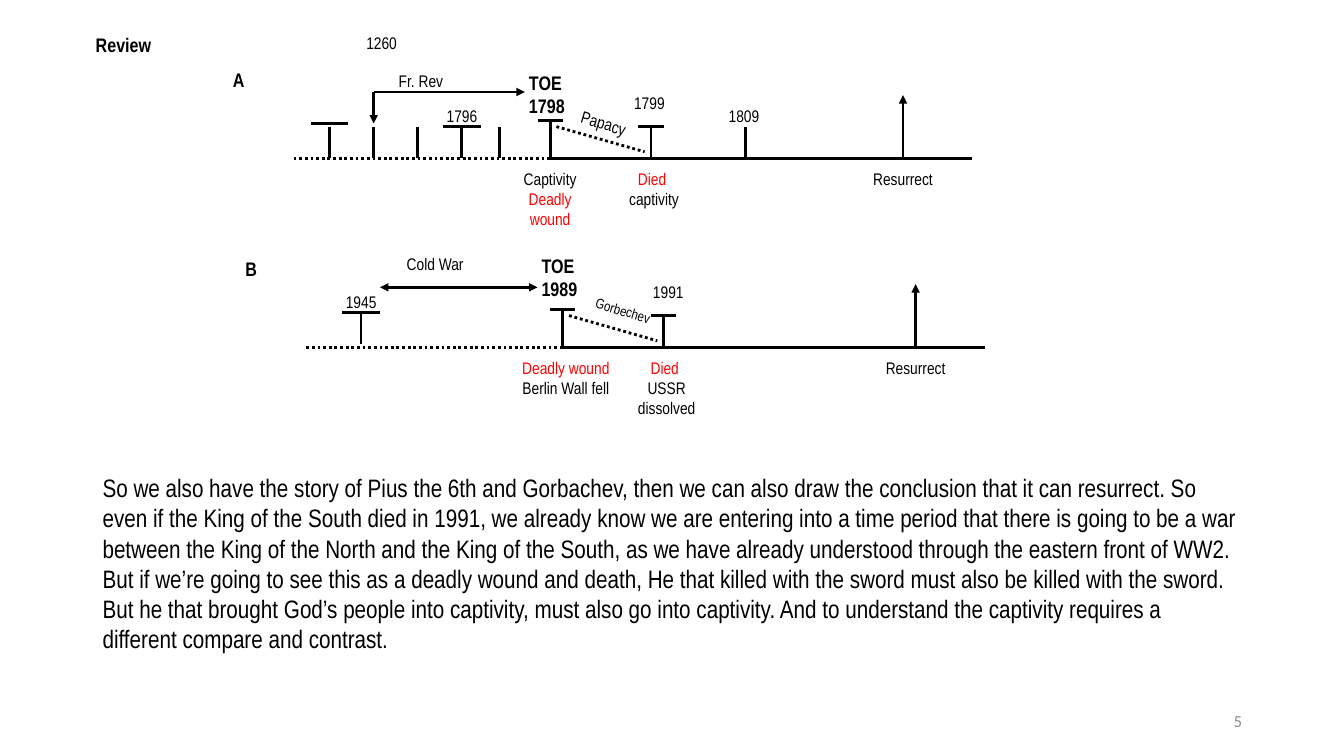
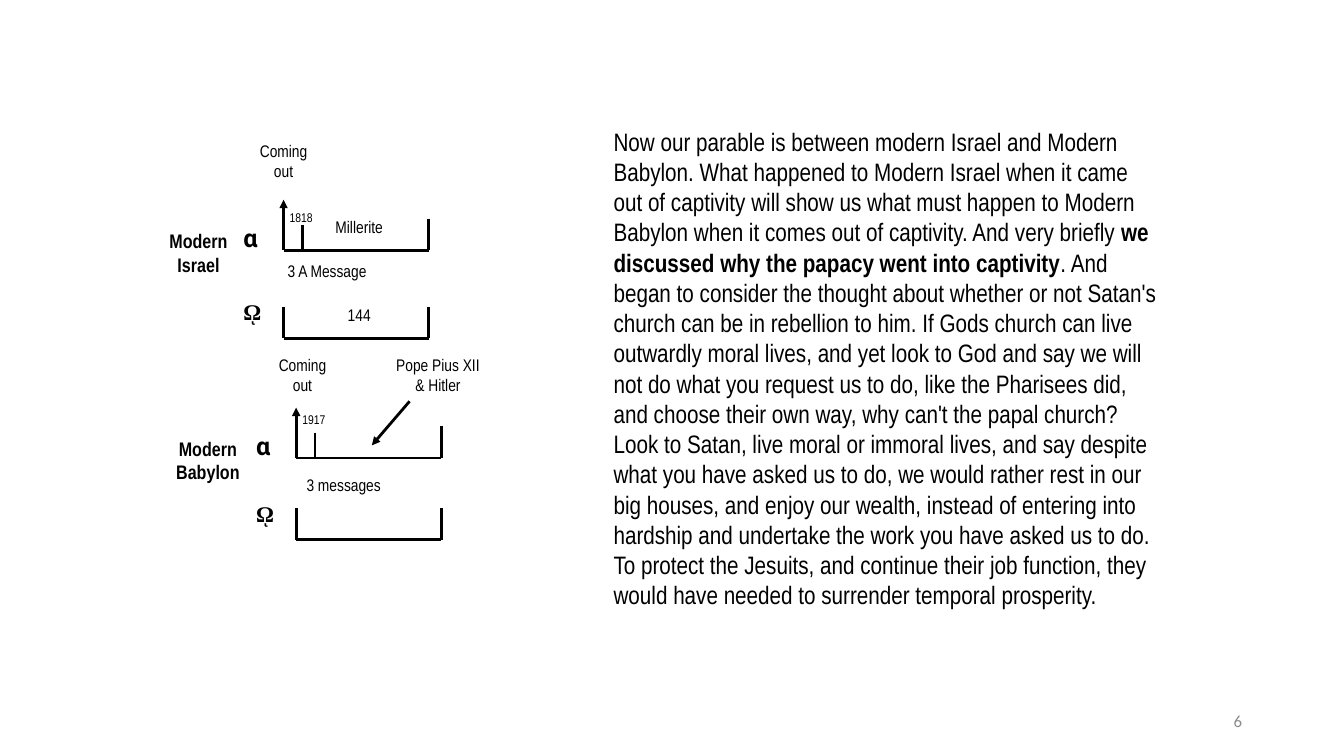
from lxml.etree import SubElement
from pptx import Presentation
from pptx.dml.color import RGBColor
from pptx.enum.dml import MSO_LINE
from pptx.enum.shapes import MSO_CONNECTOR
from pptx.enum.text import MSO_ANCHOR, MSO_AUTO_SIZE, PP_ALIGN
from pptx.oxml.ns import qn
from pptx.util import Inches, Pt

BLACK = RGBColor(0, 0, 0)
RED = RGBColor(0xFF, 0, 0)
GREY = RGBColor(0x8C, 0x8C, 0x8C)
FONT = "Arial Narrow"
LEFT, CENTER, RIGHT = PP_ALIGN.LEFT, PP_ALIGN.CENTER, PP_ALIGN.RIGHT

deck = Presentation()
deck.slide_width, deck.slide_height = Inches(13.33), Inches(7.5)
GRID = deck.slide_height // 120  # one row or column of the slide's grid
TITLE_ONLY, BLANK = deck.slide_layouts[5], deck.slide_layouts[6]


def write(shape, x, y, w, h, *lines, size=12, bold=False, align=CENTER,
          font=FONT, color=BLACK, inset=(0.04, 0.04), anchor=MSO_ANCHOR.TOP):
    """Place a text shape on the grid; a line is a string or (text, bold, color) runs."""
    shape.left, shape.top, shape.width, shape.height = (
        round(n * GRID) for n in (x, y, w, h))
    frame = shape.text_frame
    frame.word_wrap, frame.auto_size = True, MSO_AUTO_SIZE.NONE
    frame.vertical_anchor = anchor
    frame.margin_left = frame.margin_right = Inches(inset[0])
    frame.margin_top = frame.margin_bottom = Inches(inset[1])
    for i, line in enumerate(lines):
        paragraph = frame.add_paragraph() if i else frame.paragraphs[0]
        paragraph.alignment = align
        for text, strong, tint in [(line, bold, color)] if isinstance(line, str) else line:
            run = paragraph.add_run()
            run.text = text
            run.font.name, run.font.size = font, Pt(size)
            run.font.bold, run.font.color.rgb = strong, tint
    return shape


def draw(slide, x1, y1, x2, y2, dotted=False, head=False, tail=False):
    """Draw a line between two grid points, with optional arrowheads."""
    line = slide.shapes.add_connector(
        MSO_CONNECTOR.STRAIGHT, *(round(n * GRID) for n in (x1, y1, x2, y2)))
    line.line.color.rgb, line.line.width = BLACK, Pt(2)
    if dotted:
        line.line.dash_style = MSO_LINE.ROUND_DOT
    properties = line._element.spPr
    for end, wanted in (("a:headEnd", head), ("a:tailEnd", tail)):
        if wanted:
            SubElement(properties.find(qn("a:ln")), qn(end), type="triangle")
    SubElement(properties, qn("a:effectLst"))


# Slide 1: two timelines, placed from the time of the end (TOE)
review = deck.slides.add_slide(TITLE_ONLY)
write(review.shapes.title, 9.3, 4.6, 20.6, 7, "Review", size=14, bold=True)

DIED = [("Died ", False, RED)]
timelines = [
    # letter, origin, TOE row, year, wound column and width, lines, death year and column, lines
    ("A", 87.3, 25.1, -14.5, "1798", (-7, 14),
     ["Captivity", [("Deadly wound", False, RED)]], "1799", 12, [DIED, "captivity"]),
    ("B", 89.3, 55.1, -15.5, "1989", (-8, 17),
     [[("Deadly wound", False, RED)], "Berlin Wall fell"], "1991", 13,
     [DIED, "USSR", "dissolved"]),
]
for (letter, toe, base, toe_row, toe_year, (wound, wound_width), wound_lines,
     death_year, death_col, death_lines) in timelines:
    # Axis, TOE mark, decline, death mark, resurrection arrow
    for x1, y1, x2, y2, dotted, tail in [
        (0, 0, 67, 0, False, False), (0, 0, -41, 0, True, False),
        (0, -6, 0, 0, False, False), (-2, -6, 2, -6, False, False),
        (1, -5, 15, -1, True, False),
        (16, -5, 16, 0, False, False), (14, -5, 18, -5, False, False),
        (56, 0, 56, -10, False, True),
    ]:
        draw(review, toe + x1, base + y1, toe + x2, base + y2, dotted, tail=tail)
    for x, y, w, h, lines, style in [
        (-51, -15, 4, 5, [letter], {"size": 14, "bold": True, "align": LEFT}),
        (-4, toe_row, 8, 8.5, ["TOE", toe_year], {"size": 14, "bold": True, "align": LEFT}),
        (wound, 1, wound_width, 11, wound_lines, {}),
        (death_col, -11, 7.5, 4.5, [death_year], {}),
        (11, 1, 11, 11, death_lines, {}),
        (50, 1, 12, 5, ["Resurrect"], {}),
    ]:
        write(review.shapes.add_textbox(0, 0, 0, 0), toe + x, base + y, w, h, *lines, **style)

(_, toe_a, base_a, *_), (_, toe_b, base_b, *_) = timelines

# Dates and spans that belong to one timeline only
for toe, base, x, y, w, h, text in [
    (toe_a, base_a, -34.5, -20.5, 15.5, 4, "1260"),
    (toe_a, base_a, -27, -14.5, 13, 3.5, "Fr. Rev"),
    (toe_a, base_a, -17.5, -9, 7, 4, "1796"),
    (toe_a, base_a, 27, -9, 7.5, 4.5, "1809"),
    (toe_b, base_b, -28, -15.5, 15.5, 4, "Cold War"),
    (toe_b, base_b, -35.5, -9.5, 7, 4, "1945"),
]:
    write(review.shapes.add_textbox(0, 0, 0, 0), toe + x, base + y, w, h, text)

for x in (-35, -28, -21, -14, -8, 31):
    draw(review, toe_a + x, base_a - 5, toe_a + x, base_a)
draw(review, toe_a - 17, base_a - 5, toe_a - 11, base_a - 5)
draw(review, toe_a - 38, base_a - 5.5, toe_a - 32, base_a - 5.5)
draw(review, toe_a - 28, base_a - 10.5, toe_a - 28, base_a - 5.5, tail=True)
draw(review, toe_a - 28, base_a - 10.5, toe_a - 4, base_a - 10.5, tail=True)
draw(review, toe_b - 32, base_b - 5.5, toe_b - 32, base_b - 0.5)
draw(review, toe_b - 35, base_b - 5.5, toe_b - 29, base_b - 5.5)
draw(review, toe_b - 29, base_b - 9.5, toe_b - 4, base_b - 9.5, head=True, tail=True)

# Names along the declines
for toe, base, width, name, size in [
    (toe_a, base_a, 9, "Papacy", 12), (toe_b, base_b, 11, "Gorbechev", 10),
]:
    decline = write(review.shapes.add_textbox(0, 0, 0, 0),
                    toe + 4, base - 7.8, width, 4.5, name, size=size)
    decline.rotation = 16.6

write(review.shapes.add_textbox(0, 0, 0, 0), 14.7, 74.2, 184, 35.5,
      "So we also have the story of Pius the 6th and Gorbachev, then we can also draw the "
      "conclusion that it can resurrect. So even if the King of the South died in 1991, we "
      "already know we are entering into a time period that there is going to be a war "
      "between the King of the North and the King of the South, as we have already "
      "understood through the eastern front of WW2. But if we’re going to see this as a "
      "deadly wound and death, He that killed with the sword must also be killed with the "
      "sword. But he that brought God’s people into captivity, must also go into captivity. "
      "And to understand the captivity requires a different compare and contrast.",
      size=18, align=LEFT, inset=(0.1, 0.05))

# Slide 2: alpha and omega brackets for each people
parable = deck.slides.add_slide(BLANK)
peoples = [
    # name, name column and width, left, alpha base, omega base, coming out, year, message
    ("Israel", -19, 11, 45, 39.7, 53.7, (-6, -18), "1818", -7, "3 A Message", (0, 1)),
    ("Babylon", -20, 12, 47, 72.7, 85.7, (-5, -17), "1917", -8, "3 messages", (1, 2)),
]
for (people, name_col, name_width, left, alpha, omega, (out_col, out_row),
     year, year_row, message, (message_col, message_row)) in peoples:
    for base in (alpha, omega):
        draw(parable, left, base, left + 23, base)
        for side in (left, left + 23):
            draw(parable, side, base - 5, side, base)
    draw(parable, left, alpha - 3, left, alpha - 8, tail=True)
    draw(parable, left + 3, alpha - 4, left + 3, alpha)
    for x, y, w, h, lines, style in [
        (name_col, alpha - 4, name_width, 11, ["Modern", people], {"size": 14, "bold": True}),
        (-7, alpha - 5, 5, 5, ["α"],
         {"size": 18, "bold": True, "align": LEFT, "font": "Roboto"}),
        (-7, omega - 7, 5, 9, ["ῼ"],
         {"size": 16, "bold": True, "align": LEFT, "font": "Times New Roman"}),
        (out_col, alpha + out_row, 12, 9, ["Coming out"], {}),
        (0, alpha + year_row, 5.6, 3.8, [year], {"size": 9}),
        (message_col, alpha + message_row, 22, 5, [message], {"align": LEFT}),
    ]:
        write(parable.shapes.add_textbox(0, 0, 0, 0), left + x, y, w, h, *lines, **style)

# What stands inside the brackets
for x, y, w, h, lines in [
    (51, 33.7, 12, 5, ["Millerite"]),
    (51, 47.7, 12, 5, ["144"]),
    (62, 55.7, 15, 8, ["Pope Pius XII", "& Hitler"]),
]:
    write(parable.shapes.add_textbox(0, 0, 0, 0), x, y, w, h, *lines)
draw(parable, 65, 63.7, 59, 70.7, tail=True)

write(parable.shapes.add_textbox(0, 0, 0, 0), 95.8, 19.2, 89.6, 88.8, [
    ("Now our parable is between modern Israel and Modern Babylon. What happened to Modern "
     "Israel when it came out of captivity will show us what must happen to Modern Babylon "
     "when it comes out of captivity. And very briefly ", False, BLACK),
    ("we discussed why the papacy went into captivity", True, BLACK),
    (". And began to consider the thought about whether or not Satan's church can be in "
     "rebellion to him. If Gods church can live outwardly moral lives, and yet look to God "
     "and say we will not do what you request us to do, like the Pharisees did, and choose "
     "their own way, why can't the papal church? Look to Satan, live moral or immoral "
     "lives, and say despite what you have asked us to do, we would rather rest in our big "
     "houses, and enjoy our wealth, instead of entering into hardship and undertake the "
     "work you have asked us to do. To protect the Jesuits, and continue their job "
     "function, they would have needed to surrender temporal prosperity.", False, BLACK),
], size=18, align=LEFT, inset=(0.1, 0.05))

# Slide numbers as fields, counted from 5
deck.element.set("firstSlideNum", "5")
for number, slide in enumerate(deck.slides, 5):
    footer = write(slide.shapes.add_textbox(0, 0, 0, 0), 150.7, 111.2, 48, 6.4, str(number),
                   align=RIGHT, font="Calibri", color=GREY, inset=(0.1, 0.05),
                   anchor=MSO_ANCHOR.MIDDLE)
    run = footer.text_frame.paragraphs[0].runs[0]._r
    field = SubElement(run.getparent(), qn("a:fld"), type="slidenum",
                       id="{B6F15528-21DE-4FAA-801E-634DDDAF4B2B}")
    run.getparent().remove(run)
    field.extend(list(run))

deck.save("out.pptx")
